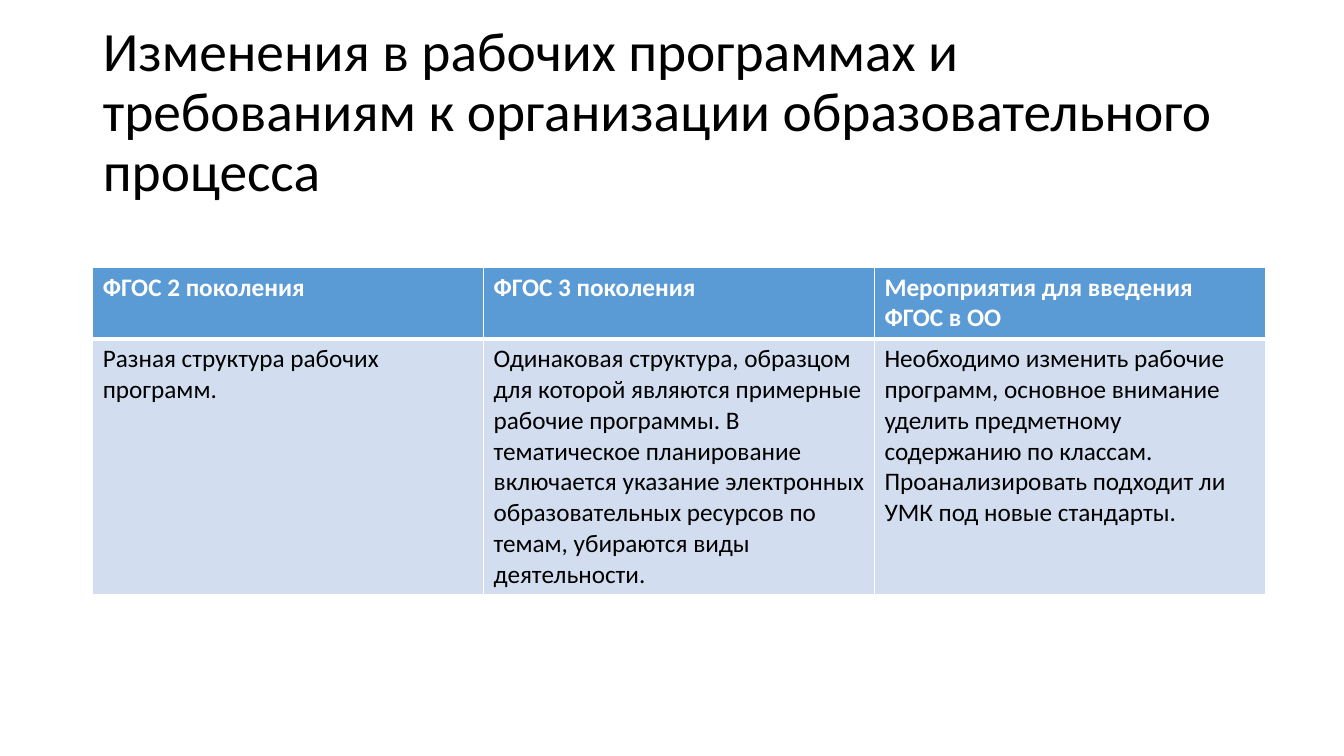
from lxml.etree import SubElement
from pptx import Presentation
from pptx.dml.color import RGBColor
from pptx.enum.text import MSO_ANCHOR as Anchor, MSO_AUTO_SIZE as Fit, PP_ALIGN as Align
from pptx.oxml.ns import qn
from pptx.util import Pt

PX = 9144  # EMU in one px, 100 px to the inch
HUES = {"ink": "000000", "paper": "FFFFFF", "head": "5B9BD5", "band": "D2DEEF"}
TITLE = "Изменения в рабочих программах и требованиям к организации образовательного процесса"
ROWS = [
    ["ФГОС 2 поколения", "ФГОС 3 поколения", "Мероприятия для введения ФГОС в ОО"],
    [
        "Разная структура рабочих программ.",
        "Одинаковая структура, образцом для которой являются примерные рабочие программы. "
        "В тематическое планирование включается указание электронных образовательных "
        "ресурсов по темам, убираются виды деятельности.",
        "Необходимо изменить рабочие программ, основное внимание уделить предметному "
        "содержанию по классам. Проанализировать подходит ли УМК под новые стандарты.",
    ],
]
HEIGHTS = [69, 251]


def assign(item, values):
    for name, value in values.items():
        setattr(item, name, value)


def style(font, hue, size, bold=False):
    assign(font, {"name": "Calibri", "size": Pt(size), "bold": bold})
    font.color.rgb = RGBColor.from_string(HUES[hue])


def border(cell, widths):
    """Draw white cell edges; widths maps an edge tag to points."""
    props = cell._tc.get_or_add_tcPr()
    for place, (edge, width) in enumerate(widths.items()):
        line = props.makeelement(qn("a:" + edge), {"w": str(Pt(width))})
        fill = SubElement(line, qn("a:solidFill"))
        SubElement(fill, qn("a:srgbClr"), val=HUES["paper"])
        props.insert(place, line)


def add_title(slide, box):
    title = slide.shapes.title
    assign(title, dict(zip(("left", "top", "width", "height"), (n * PX for n in box))))
    frame = title.text_frame
    assign(frame, {"text": TITLE, "word_wrap": True, "auto_size": Fit.NONE,
                   "vertical_anchor": Anchor.MIDDLE})
    para = frame.paragraphs[0]
    assign(para, {"alignment": Align.LEFT, "line_spacing": 0.9})
    style(para.runs[0].font, "ink", 39.6)


def add_grid(slide, box):
    count = len(ROWS[0])
    table = slide.shapes.add_table(len(ROWS), count, *(n * PX for n in box)).table
    for column in table.columns:
        column.width = box[2] * PX // count
    for r, (texts, height) in enumerate(zip(ROWS, HEIGHTS)):
        table.rows[r].height = height * PX
        head = r == 0
        for c, text in enumerate(texts):
            cell = table.cell(r, c)
            cell.text = text
            style(cell.text_frame.paragraphs[0].runs[0].font,
                  "paper" if head else "ink", 18, head)
            cell.fill.solid()
            cell.fill.fore_color.rgb = RGBColor.from_string(HUES["head" if head else "band"])
            border(cell, {"lnL": 1, "lnR": 1, "lnT": 1 if head else 3, "lnB": 3 if head else 1})


def main():
    deck = Presentation()
    assign(deck, {"slide_width": 1333 * PX, "slide_height": 750 * PX})
    slide = deck.slides.add_slide(deck.slide_layouts[5])
    add_title(slide, (92, 40, 1150, 145))
    add_grid(slide, (92, 265, 1163, sum(HEIGHTS)))
    deck.save("out.pptx")


if __name__ == "__main__":
    main()
